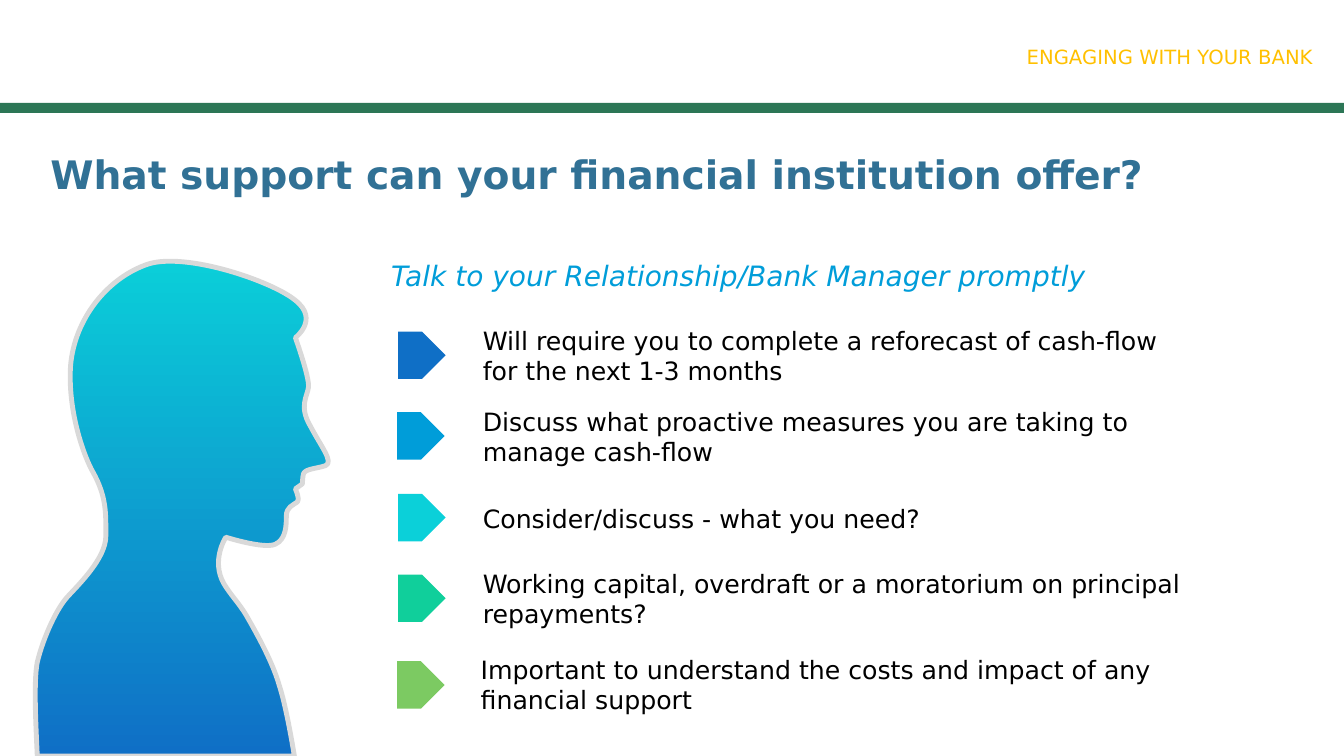
from lxml import etree
from pptx import Presentation
from pptx.dml.color import RGBColor
from pptx.enum import shapes, text
from pptx.oxml import ns
from pptx.util import Inches, Pt

FONT = "DejaVu Sans"
COLORS = {
    "white": "FFFFFF", "black": "000000", "band": "2C7656", "title": "317195",
    "gold": "FFC000", "blue": "0F6FC6", "sky": "009DD9", "cyan": "0BD0D9",
    "teal": "10CF9B", "green": "7CCA62", "edge": "BFBFBF", "rim": "D9D9D9",
}
HEAD_START = (2.68, 2.2)
HEAD_CURVES = [
    ((2.67, 2.24), (2.67, 2.3), (2.67, 2.3)),
    ((2.6, 2.35), (2.6, 2.35), (2.6, 2.35)),
    ((2.6, 2.35), (2.65, 2.46), (2.62, 2.48)),
    ((2.58, 2.51), (2.51, 2.53), (2.51, 2.62)),
    ((2.51, 2.71), (2.51, 2.85), (2.4, 2.9)),
    ((2.29, 2.95), (1.91, 2.83), (1.91, 2.83)),
    ((1.91, 2.83), (1.76, 3.06), (1.89, 3.29)),
    ((1.97, 3.42), (2.03, 3.47), (2.11, 3.6)),
    ((2.19, 3.74), (2.37, 4.05), (2.44, 4.3)),
    ((2.5, 4.48), (2.56, 4.82), (2.59, 5)),
    ((0.04, 5), (0.04, 5), (0.04, 5)),
    ((0.03, 4.77), (0, 4.27), (0.04, 4.07)),
    ((0.1, 3.82), (0.24, 3.52), (0.35, 3.41)),
    ((0.45, 3.3), (0.72, 3.04), (0.72, 2.82)),
    ((0.72, 2.6), (0.73, 2.43), (0.59, 2.18)),
    ((0.52, 2.06), (0.34, 1.61), (0.37, 1.13)),
    ((0.41, 0.65), (0.75, 0.25), (1.14, 0.12)),
    ((1.52, 0), (2.37, 0.29), (2.6, 0.48)),
    ((2.84, 0.67), (2.6, 0.85), (2.6, 0.85)),
    ((2.6, 0.85), (2.74, 1.24), (2.73, 1.34)),
    ((2.72, 1.43), (2.63, 1.53), (2.75, 1.73)),
    ((2.86, 1.94), (2.98, 2.08), (2.9, 2.12)),
    ((2.81, 2.15), (2.7, 2.15), (2.68, 2.2)),
]
STEPS = [
    (3.95, 3.29, 4.69, 3.18, 7.28, 0.71, "blue",
     "Will require you to complete a reforecast of cash-flow for the next 1-3 months"),
    (3.95, 4.9, 4.69, 4.94, 6.84, 0.4, "cyan", "Consider/discuss - what you need?"),
    (3.94, 4.09, 4.69, 3.98, 7.54, 0.71, "sky",
     "Discuss what proactive measures you are taking to manage cash-flow"),
    (3.95, 5.7, 4.69, 5.59, 7.54, 0.71, "teal",
     "Working capital, overdraft or a moratorium on principal repayments?"),
    (3.94, 6.56, 4.67, 6.44, 7.14, 0.71, "green",
     "Important to understand the costs and impact of any financial support"),
]


def rgb(name):
    """Return the named colour."""
    return RGBColor.from_string(COLORS[name])


def write(sp, words, size, color, bold=False, italic=False, align=text.PP_ALIGN.LEFT):
    """Put one formatted paragraph in a shape."""
    tf = sp.text_frame
    tf.text = words
    tf.word_wrap = True
    p = tf.paragraphs[0]
    p.alignment = align
    font = p.runs[0].font
    font.name, font.size, font.bold, font.italic = FONT, Pt(size), bold, italic
    font.color.rgb = rgb(color)
    return tf


def add_block(s, kind, x, y, w, h, color):
    """Add a flat preset shape to a slide or group."""
    sp = s.shapes.add_shape(kind, Inches(x), Inches(y), Inches(w), Inches(h))
    sp.shadow.inherit = False
    sp.fill.solid()
    sp.fill.fore_color.rgb = rgb(color)
    sp.line.fill.background()
    return sp


def add_label(s, x, y, w, h, words, size, color, italic=False):
    """Add a text box that grows with its text."""
    sp = s.shapes.add_textbox(Inches(x), Inches(y), Inches(w), Inches(h))
    tf = write(sp, words, size, color, italic=italic)
    tf.auto_size = text.MSO_AUTO_SIZE.SHAPE_TO_FIT_TEXT


def add_title(s, x, y, w, h):
    """Place and fill the title placeholder."""
    sp = s.shapes.title
    sp.left, sp.top, sp.width, sp.height = Inches(x), Inches(y), Inches(w), Inches(h)
    tf = write(sp, "What support can your financial institution offer?", 28, "title", bold=True)
    tf.vertical_anchor = text.MSO_ANCHOR.MIDDLE
    tf.paragraphs[0].line_spacing = 0.9


def add_section_name(s, x, y, w, h):
    """Add the section name at the top right."""
    sp = add_block(s, shapes.MSO_SHAPE.RECTANGLE, x, y, w, h, "white")
    tf = write(sp, "ENGAGING WITH YOUR BANK", 14, "gold", align=text.PP_ALIGN.RIGHT)
    tf.word_wrap = False
    tf.vertical_anchor = text.MSO_ANCHOR.TOP
    tf.auto_size = text.MSO_AUTO_SIZE.SHAPE_TO_FIT_TEXT


def curve_outline(sp):
    """Turn each three line segments of a freeform into one Bezier curve."""
    lines = list(sp._element.iter(ns.qn("a:lnTo")))
    for i in range(0, len(lines), 3):
        curve = etree.Element(ns.qn("a:cubicBezTo"))
        lines[i].addprevious(curve)
        for line in lines[i:i + 3]:
            curve.append(line[0])
            line.getparent().remove(line)


def add_silhouette(s, x, y):
    """Add the gradient head and its thick rim."""
    group = s.shapes.add_group_shape()
    start = Inches(x + HEAD_START[0]), Inches(y + HEAD_START[1])
    points = [(Inches(x + px), Inches(y + py)) for curve in HEAD_CURVES for px, py in curve]
    for color, width in (("edge", 0.75), ("rim", 3.5)):
        builder = group.shapes.build_freeform(*start)
        builder.add_line_segments(points, close=True)
        sp = builder.convert_to_shape()
        curve_outline(sp)
        sp.shadow.inherit = False
        sp.line.color.rgb = rgb(color)
        sp.line.width = Pt(width)
        if color == "rim":
            sp.fill.background()
            continue
        sp.fill.gradient()
        sp.fill.gradient_angle = 90
        for stop, name, position in zip(sp.fill.gradient_stops, ("blue", "cyan"), (0, 1)):
            stop.color.rgb = rgb(name)
            stop.position = position


def add_step(s, x, y, text_x, text_y, text_w, text_h, color, words):
    """Add an arrow marker grouped with its text."""
    group = s.shapes.add_group_shape()
    add_block(group, shapes.MSO_SHAPE.PENTAGON, x, y, 0.47, 0.47, color)
    add_label(group, text_x, text_y, text_w, text_h, words, 18, "black")


def main():
    """Build and save the slide."""
    prs = Presentation()
    prs.slide_width, prs.slide_height = Inches(13.33), Inches(7.5)
    s = prs.slides.add_slide(prs.slide_layouts[5])
    add_block(s, shapes.MSO_SHAPE.RECTANGLE, 0, 1.02, 13.33, 0.1, "band")
    add_title(s, 0.4, 1.3, 12.55, 0.91)
    add_silhouette(s, 0.33, 2.5)
    add_section_name(s, 9.97, 0.4, 3.15, 0.34)
    add_label(s, 3.78, 2.52, 8.92, 0.44,
              "Talk to your Relationship/Bank Manager promptly", 20, "sky", italic=True)
    for step in STEPS:
        add_step(s, *step)
    prs.save("out.pptx")


if __name__ == "__main__":
    main()
